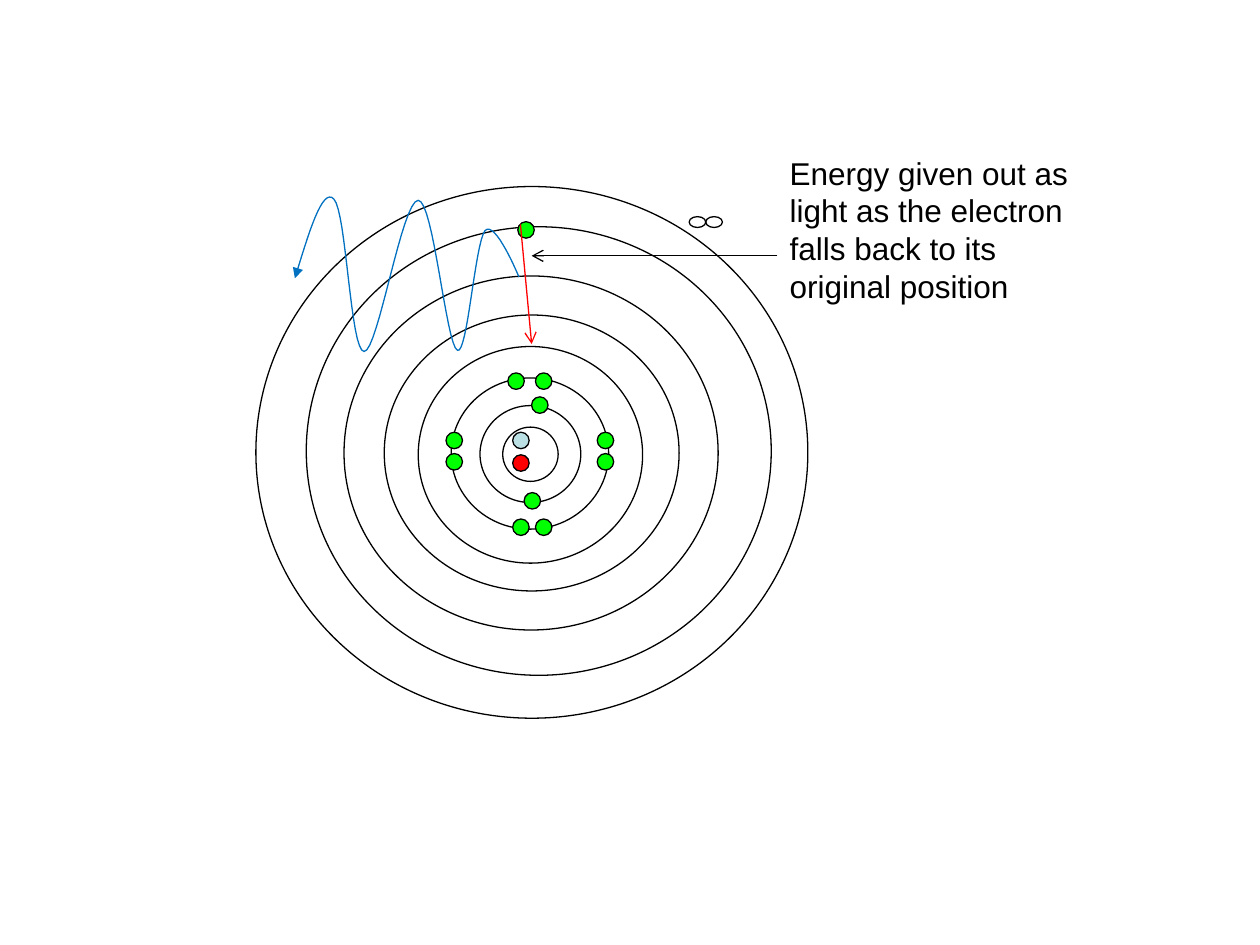
"""Draw an atom whose excited electron falls back and gives out light."""
import dataclasses
import itertools

import lxml.etree
import pptx
import pptx.dml.color
import pptx.enum.shapes
import pptx.enum.text
import pptx.oxml.ns
import pptx.util

Pt = pptx.util.Pt
OVAL = pptx.enum.shapes.MSO_SHAPE.OVAL
LINE = pptx.enum.shapes.MSO_CONNECTOR.STRAIGHT
BLACK, RED, GREEN, PALE, BLUE = "000000", "FF0000", "00FF00", "BBE0E3", "0070C0"
DOT = 9.4


@dataclasses.dataclass
class Oval:
    left: float
    top: float
    wide: float
    high: float
    fill: str | None = None


@dataclasses.dataclass
class Arrow:
    start: tuple[float, float]
    end: tuple[float, float]
    color: str


RINGS = [
    Oval(287.3, 244.1, 31.7, 31),
    Oval(274.3, 231.8, 57.6, 55.4),
    Oval(257.8, 216, 90, 86.4),
    Oval(239, 198, 128.2, 123.8),
    Oval(219.6, 180, 168.5, 157.7),
    Oval(196.6, 157.7, 213.8, 202.3),
    Oval(175, 129.6, 265.7, 256.3),
    Oval(146.2, 106.6, 315.4, 303.8),
]
SIDES = list(itertools.product((254.9, 341.3), (247, 259.2)))
SPOTS = SIDES + [
    (290.2, 213.1), (306, 213.1), (293, 296.6), (306, 296.6),
    (303.8, 226.8), (299.5, 281.5), (295.9, 126.7),
]
CORE = [Oval(293, 247, DOT, DOT, PALE), Oval(293, 259.9, DOT, DOT, RED)]
DOTS = CORE + [Oval(x, y, DOT, DOT, GREEN) for x, y in SPOTS]
LOOPS = [Oval(x, 123.8, 9.5, 6.2) for x in (393.8, 403.3)]
ARROWS = [
    Arrow((297.4, 128.2), (303.8, 196.6), RED),
    Arrow((444.2, 146.2), (303.8, 146.2), BLACK),
]
WAVE = [
    (168.5, 159.1),
    (176.4, 133.2), (184.3, 106.6), (190.8, 113.8),
    (198, 121), (200.2, 200.9), (208.1, 200.9),
    (216, 200.9), (229.7, 114.5), (239, 114.5),
    (247.7, 114.5), (254.9, 197.3), (261.4, 200.2),
    (267.1, 203), (271.4, 139), (277.2, 131.8),
    (283, 125.3), (296.6, 158.4), (296.6, 158.4),
]


def paint(code: str) -> pptx.dml.color.RGBColor:
    return pptx.dml.color.RGBColor.from_string(code)


def style(item, color: str, tip: tuple[str, str] | None = None) -> None:
    item.line.color.rgb = paint(color)
    item.line.width = Pt(0.75)
    if tip:
        tag, kind = tip
        edge = item.line._get_or_add_ln()
        lxml.etree.SubElement(edge, pptx.oxml.ns.qn(f"a:{tag}"), type=kind)


def draw_oval(shapes, oval: Oval) -> None:
    item = shapes.add_shape(
        OVAL, Pt(oval.left), Pt(oval.top), Pt(oval.wide), Pt(oval.high))
    item.shadow.inherit = False
    if oval.fill:
        item.fill.solid()
        item.fill.fore_color.rgb = paint(oval.fill)
    else:
        item.fill.background()
    style(item, BLACK)


def draw_arrow(shapes, arrow: Arrow) -> None:
    item = shapes.add_connector(LINE, *map(Pt, arrow.start + arrow.end))
    style(item, arrow.color, ("tailEnd", "arrow"))
    lxml.etree.SubElement(item._element.spPr, pptx.oxml.ns.qn("a:effectLst"))


def trace(knots: list[tuple[float, float]], steps: int = 16):
    for i in range(0, len(knots) - 1, 3):
        for n in range(1, steps + 1):
            t = n / steps
            u = 1 - t
            parts = (u ** 3, 3 * u * u * t, 3 * u * t * t, t ** 3)
            yield tuple(
                Pt(sum(p * k[axis] for p, k in zip(parts, knots[i:i + 4])))
                for axis in (0, 1))


def draw_wave(shapes, knots: list[tuple[float, float]]) -> None:
    pen = shapes.build_freeform(*map(Pt, knots[0]))
    pen.add_line_segments(list(trace(knots)), close=False)
    item = pen.convert_to_shape()
    item.shadow.inherit = False
    item.fill.background()
    style(item, BLUE, ("headEnd", "triangle"))


def write_note(shapes, text: str) -> None:
    box = shapes.add_textbox(Pt(444.2), Pt(84.2), Pt(180), Pt(94.3))
    frame = box.text_frame
    look = {
        "word_wrap": True,
        "auto_size": pptx.enum.text.MSO_AUTO_SIZE.SHAPE_TO_FIT_TEXT,
    }
    for name, value in look.items():
        setattr(frame, name, value)
    run = frame.paragraphs[0].add_run()
    run.text = text
    for name, value in {"name": "Arial", "size": Pt(18)}.items():
        setattr(run.font, name, value)
    run.font.color.rgb = paint(BLACK)


def main() -> None:
    deck = pptx.Presentation()
    deck.slide_width, deck.slide_height = Pt(720), Pt(540)
    shapes = deck.slides.add_slide(deck.slide_layouts[6]).shapes
    for oval in RINGS + DOTS + LOOPS:
        draw_oval(shapes, oval)
    for arrow in ARROWS:
        draw_arrow(shapes, arrow)
    write_note(shapes, "Energy given out as light as the electron "
                       "falls back to its original position")
    draw_wave(shapes, WAVE)
    deck.save("out.pptx")


if __name__ == "__main__":
    main()
